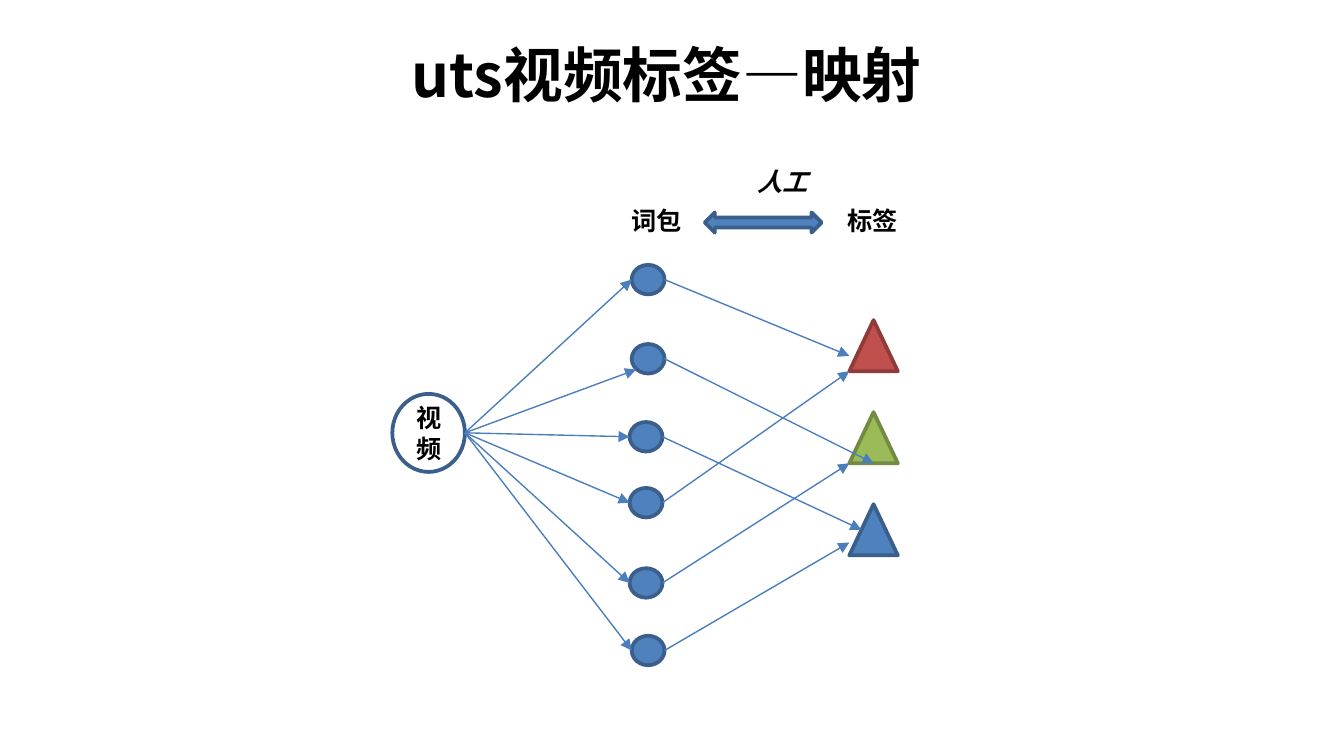
from pptx import Presentation
from pptx.dml.color import RGBColor
from pptx.enum.shapes import MSO_CONNECTOR as Link, MSO_SHAPE as Kind
from pptx.enum.text import MSO_ANCHOR as Anchor, PP_ALIGN as Align
from pptx.oxml.ns import qn
from pptx.util import Pt
from lxml.etree import SubElement as sub

THEME = {
    "black": "000000", "blue": "4F81BD", "navy": "3A5F8C", "link": "4B7EBC",
    "red": "C0504D", "maroon": "8E3B39", "green": "9BBB59", "olive": "738A42",
    "latin": "Calibri", "cjk": "Noto Sans CJK SC",
    "head": 32, "body": 13.5, "edge": 2, "thin": 0.75,
}

TITLE = ("uts视频标签—映射", (46.8, 0, 620.6, 78.5))
VIDEO = ("视频", (210.2, 211, 38.9, 41.8))
LABELS = [("词包", 331.2, 106.6, False), ("标签", 447.1, 106.6, False),
          ("人工", 398.9, 85.7, True)]
ARROW = (377.6, 113.8, 62.6, 10.8)
WORDS = [(338.4, 149.8), (338.4, 192.2), (337.3, 234),
         (337.3, 269.3), (337.3, 312.3), (338.4, 348.5)]
WORD_W, WORD_H = 17.6, 15.8
TAGS = [("red", "maroon"), ("green", "olive"), ("blue", "navy")]
TAG_X, TAG_Y, TAG_W, TAG_H, TAG_STEP = 455, 171.5, 26, 27.4, 49.3
INLETS = {1: (340.8, 198)}
HITS = [(0, 0, 0.7), (1, 0.5, 1), (2, 0.25, 0.5),
        (0, 0, 1), (1, 0, 1), (2, 0, 0.75)]


def color(name):
    return RGBColor.from_string(THEME[name])


def write(shape, text, size="body", font="latin", wrap=True,
          align=Align.CENTER, anchor=Anchor.MIDDLE, italic=False):
    frame = shape.text_frame
    frame.word_wrap = wrap
    frame.vertical_anchor = anchor
    para = frame.paragraphs[0]
    para.alignment = align
    run = para.add_run()
    run.text = text
    look = {"size": Pt(THEME[size]), "bold": True, "italic": italic,
            "name": THEME[font]}
    for key, val in look.items():
        setattr(run.font, key, val)
    run.font.color.rgb = color("black")
    sub(run.font._element, qn("a:ea"), typeface=THEME["cjk"])


def draw(kind, box, fill="blue", edge="navy"):
    shape = shapes.add_shape(kind, *map(Pt, box))
    shape.shadow.inherit = False
    if fill:
        shape.fill.solid()
        shape.fill.fore_color.rgb = color(fill)
    else:
        shape.fill.background()
    shape.line.color.rgb = color(edge)
    shape.line.width = Pt(THEME["edge"])
    return shape


def join(start, end):
    link = shapes.add_connector(Link.STRAIGHT, *map(Pt, start + end))
    link.line.color.rgb = color("link")
    link.line.width = Pt(THEME["thin"])
    sub(link.line._get_or_add_ln(), qn("a:tailEnd"), type="triangle")
    sub(link._element.spPr, qn("a:effectLst"))


deck = Presentation()
deck.slide_width, deck.slide_height = Pt(720), Pt(405)
shapes = deck.slides.add_slide(deck.slide_layouts[6]).shapes

text, box = TITLE
write(shapes.add_textbox(*map(Pt, box)), text, "head", "cjk")

text, box = VIDEO
write(draw(Kind.OVAL, box, fill=None), text)
hub = (box[0] + box[2], box[1] + box[3] / 2)

for x, mid in WORDS:
    draw(Kind.OVAL, (x, mid - WORD_H / 2, WORD_W, WORD_H))

for row, (fill, edge) in enumerate(TAGS):
    top = TAG_Y + row * TAG_STEP
    draw(Kind.ISOSCELES_TRIANGLE, (TAG_X, top, TAG_W, TAG_H), fill, edge)

for num, (word, (tag, across, down)) in enumerate(zip(WORDS, HITS)):
    join(hub, INLETS.get(num, word))
    hit = (TAG_X + across * TAG_W, TAG_Y + tag * TAG_STEP + down * TAG_H)
    join((word[0] + WORD_W, word[1]), hit)

for text, x, y, italic in LABELS:
    label = shapes.add_textbox(Pt(x), Pt(y), Pt(41.8), Pt(23.8))
    write(label, text, wrap=False, align=Align.LEFT, anchor=Anchor.TOP,
          italic=italic)

draw(Kind.LEFT_RIGHT_ARROW, ARROW)
deck.save("out.pptx")
